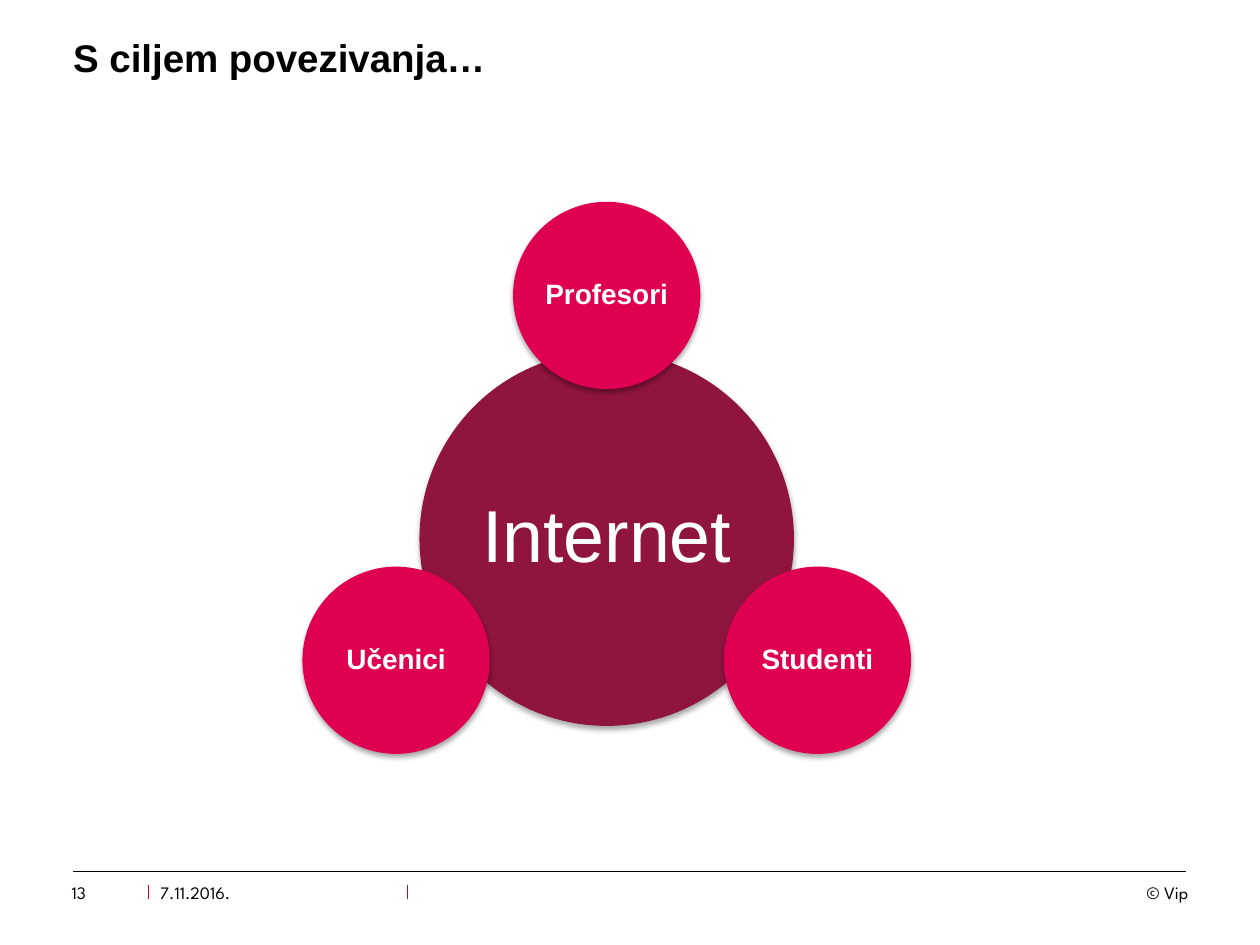
import math

import pptx
import pptx.dml.color
import pptx.enum.shapes
import pptx.enum.text
import pptx.oxml
import pptx.oxml.ns
import pptx.util

Pt = pptx.util.Pt
RGBColor = pptx.dml.color.RGBColor
ALIGN = pptx.enum.text.PP_ALIGN
ANCHOR = pptx.enum.text.MSO_ANCHOR

BLACK = RGBColor(0x00, 0x00, 0x00)
WHITE = RGBColor(0xFF, 0xFF, 0xFF)
WINE = RGBColor(0x8F, 0x15, 0x3E)
CRIMSON = RGBColor(0xDF, 0x00, 0x51)
DIVIDER_RED = RGBColor(0xDA, 0x00, 0x2A)

HUB_CENTER = (346.7, 307.8)
HUB_DIAMETER = 214
AUDIENCE_DIAMETER = 107
ORBIT = 139

SHADOW = (
    '<a:outerShdw {} blurRad="{}" dist="{}" dir="5400000" rotWithShape="0">'
    '<a:srgbClr val="000000"><a:alpha val="35000"/></a:srgbClr></a:outerShdw>'
)


def write(frame, text, font_name, size, color, bold=False, align=ALIGN.LEFT,
          anchor=ANCHOR.TOP, inset=0):
    """Put one formatted run into a text frame."""
    frame.word_wrap = True
    frame.auto_size = pptx.enum.text.MSO_AUTO_SIZE.NONE
    frame.vertical_anchor = anchor
    frame.margin_left = frame.margin_right = Pt(inset)
    frame.margin_top = frame.margin_bottom = Pt(inset)
    paragraph = frame.paragraphs[0]
    paragraph.alignment = align
    run = paragraph.add_run()
    run.text = text
    run.font.name = font_name
    run.font.size = Pt(size)
    run.font.bold = bold
    run.font.color.rgb = color
    return paragraph


def set_title(slide, text):
    """Place and format the slide title."""
    title = slide.shapes.title
    title.left, title.top = Pt(41.8), Pt(19.4)
    title.width, title.height = Pt(635.8), Pt(66.2)
    write(title.text_frame, text, "Arial", 22, BLACK, bold=True)


def add_circle(slide, center, diameter, color, text, size, bold, inset):
    """Add a labelled circle with a soft shadow, placed by its center."""
    left, top = (Pt(middle - diameter / 2) for middle in center)
    circle = slide.shapes.add_shape(
        pptx.enum.shapes.MSO_SHAPE.OVAL, left, top, Pt(diameter), Pt(diameter))
    circle.fill.solid()
    circle.fill.fore_color.rgb = color
    circle.line.fill.background()
    circle.shadow.inherit = False
    effects = circle._element.spPr.find(pptx.oxml.ns.qn("a:effectLst"))
    effects.append(pptx.oxml.parse_xml(
        SHADOW.format(pptx.oxml.ns.nsdecls("a"), Pt(3.1), Pt(1.8))))
    label = write(circle.text_frame, text, "Arial", size, WHITE, bold,
                  ALIGN.CENTER, ANCHOR.MIDDLE, inset)
    label.line_spacing = 0.9


def add_rule(slide, x1, y1, x2, y2, color):
    """Add a thin straight line without a shadow."""
    rule = slide.shapes.add_connector(
        pptx.enum.shapes.MSO_CONNECTOR.STRAIGHT, Pt(x1), Pt(y1), Pt(x2), Pt(y2))
    rule.line.color.rgb = color
    rule.line.width = Pt(0.75)
    rule._element.spPr.append(pptx.oxml.parse_xml(
        "<a:effectLst {}/>".format(pptx.oxml.ns.nsdecls("a"))))


def add_footer(slide):
    """Add the footer rule, its dividers and its texts."""
    add_rule(slide, 41.8, 498, 678, 498, BLACK)
    for x in (84.8, 232.8):
        add_rule(slide, x, 506, x, 514, DIVIDER_RED)
    for text, left, width, align in (
        ("13", 41, 43, ALIGN.LEFT),
        ("7.11.2016.", 91.5, 142, ALIGN.LEFT),
        ("© Vip", 591, 88, ALIGN.RIGHT),
    ):
        box = slide.shapes.add_textbox(Pt(left), Pt(504), Pt(width), Pt(12))
        write(box.text_frame, text, "League Spartan", 10, BLACK, align=align)


def main():
    """Build the slide and save it."""
    deck = pptx.Presentation()
    deck.slide_width, deck.slide_height = Pt(720), Pt(540)
    slide = deck.slides.add_slide(deck.slide_layouts[5])
    set_title(slide, "S ciljem povezivanja…")
    add_footer(slide)
    add_circle(slide, HUB_CENTER, HUB_DIAMETER, WINE, "Internet", 42, False, 4)
    audiences = ("Profesori", "Studenti", "Učenici")
    for index, audience in enumerate(audiences):
        angle = math.tau * index / len(audiences)
        center = (HUB_CENTER[0] + ORBIT * math.sin(angle),
                  HUB_CENTER[1] - ORBIT * math.cos(angle))
        add_circle(slide, center, AUDIENCE_DIAMETER, CRIMSON, audience, 16, True, 1.4)
    deck.save("out.pptx")


if __name__ == "__main__":
    main()
